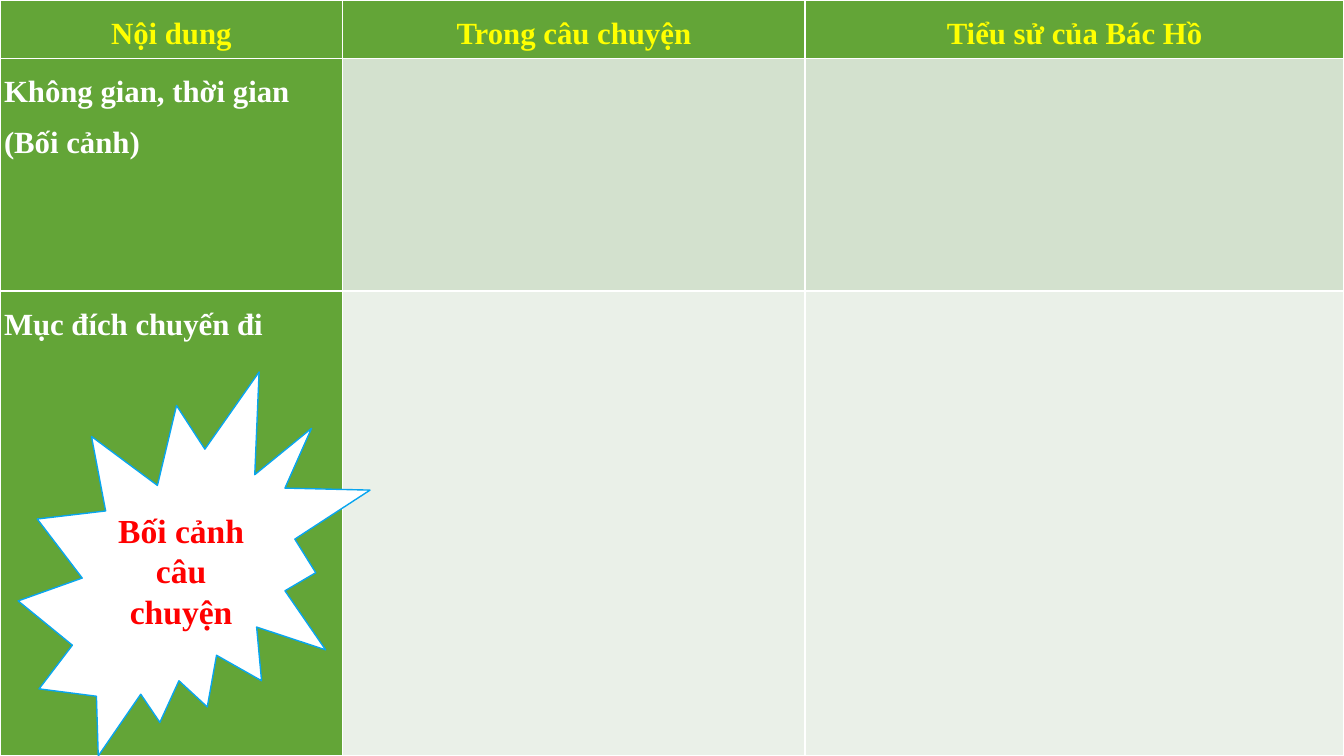
from pptx import Presentation
from pptx.dml.color import RGBColor
from pptx.enum.shapes import MSO_SHAPE as Preset
from pptx.enum.text import MSO_ANCHOR as Anchor, PP_ALIGN as Align
from pptx.util import Inches, Pt

SLIDE_WIDTH, SLIDE_HEIGHT = Inches(13.33), Inches(7.5)
FONT = "Times New Roman"
COLORS = {
    "green": "63A537",
    "band": "D3E1CE",
    "pale": "EAF0E8",
    "white": "FFFFFF",
    "yellow": "FFFF00",
    "red": "FF0000",
    "blue": "08A5EF",
}
COLUMN_SHARES = (0.255, 0.344, 0.401)
ROW_SHARES = (0.077, 0.308, 0.615)
ROWS = (
    ("Nội dung", "Trong câu chuyện", "Tiểu sử của Bác Hồ"),
    ("Không gian, thời gian (Bối cảnh)", "", ""),
    ("Mục đích chuyến đi", "", ""),
)
BODY_FILLS = ("green", "band", "pale")


def paint(fill, color):
    fill.solid()
    fill.fore_color.rgb = RGBColor.from_string(COLORS[color])


def write(text_frame, text, size, color, align, line_spacing=1.0):
    text_frame.text = text
    paragraph = text_frame.paragraphs[0]
    paragraph.alignment = align
    paragraph.line_spacing = line_spacing
    for run in paragraph.runs:
        run.font.name = FONT
        run.font.size = Pt(size)
        run.font.bold = True
        run.font.color.rgb = RGBColor.from_string(COLORS[color])


def add_comparison_table(slide):
    """Fill the slide with a table whose first row and column are headings."""
    frame = slide.shapes.add_table(
        len(ROWS), len(COLUMN_SHARES), 0, 0, SLIDE_WIDTH, SLIDE_HEIGHT
    )
    table = frame.table
    table.first_col = True
    for column, share in zip(table.columns, COLUMN_SHARES):
        column.width = int(SLIDE_WIDTH * share)
    for row, share in zip(table.rows, ROW_SHARES):
        row.height = int(SLIDE_HEIGHT * share)

    for row_index, texts in enumerate(ROWS):
        for column_index, text in enumerate(texts):
            cell = table.cell(row_index, column_index)
            is_header = row_index == 0
            is_heading = is_header or column_index == 0
            paint(cell.fill, "green" if is_heading else BODY_FILLS[row_index])
            cell.margin_left = cell.margin_right = Inches(0.04)
            cell.margin_top = cell.margin_bottom = 0
            if text:
                write(
                    cell.text_frame, text, 22,
                    "yellow" if is_header else "white",
                    Align.CENTER if is_header else Align.LEFT,
                    line_spacing=1.5,
                )


def add_burst(slide, text):
    burst = slide.shapes.add_shape(
        Preset.EXPLOSION2,
        Inches(0.18), Inches(3.69), Inches(3.49), Inches(3.81),
    )
    burst.shadow.inherit = False
    paint(burst.fill, "white")
    paint(burst.line.fill, "blue")
    burst.line.width = Pt(1)
    burst.text_frame.word_wrap = True
    burst.text_frame.vertical_anchor = Anchor.MIDDLE
    write(burst.text_frame, text, 24, "red", Align.CENTER)


def main():
    presentation = Presentation()
    presentation.slide_width = SLIDE_WIDTH
    presentation.slide_height = SLIDE_HEIGHT
    blank_layout = presentation.slide_layouts[6]
    slide = presentation.slides.add_slide(blank_layout)
    add_comparison_table(slide)
    add_burst(slide, "Bối cảnh câu chuyện")
    presentation.save("out.pptx")


if __name__ == "__main__":
    main()
